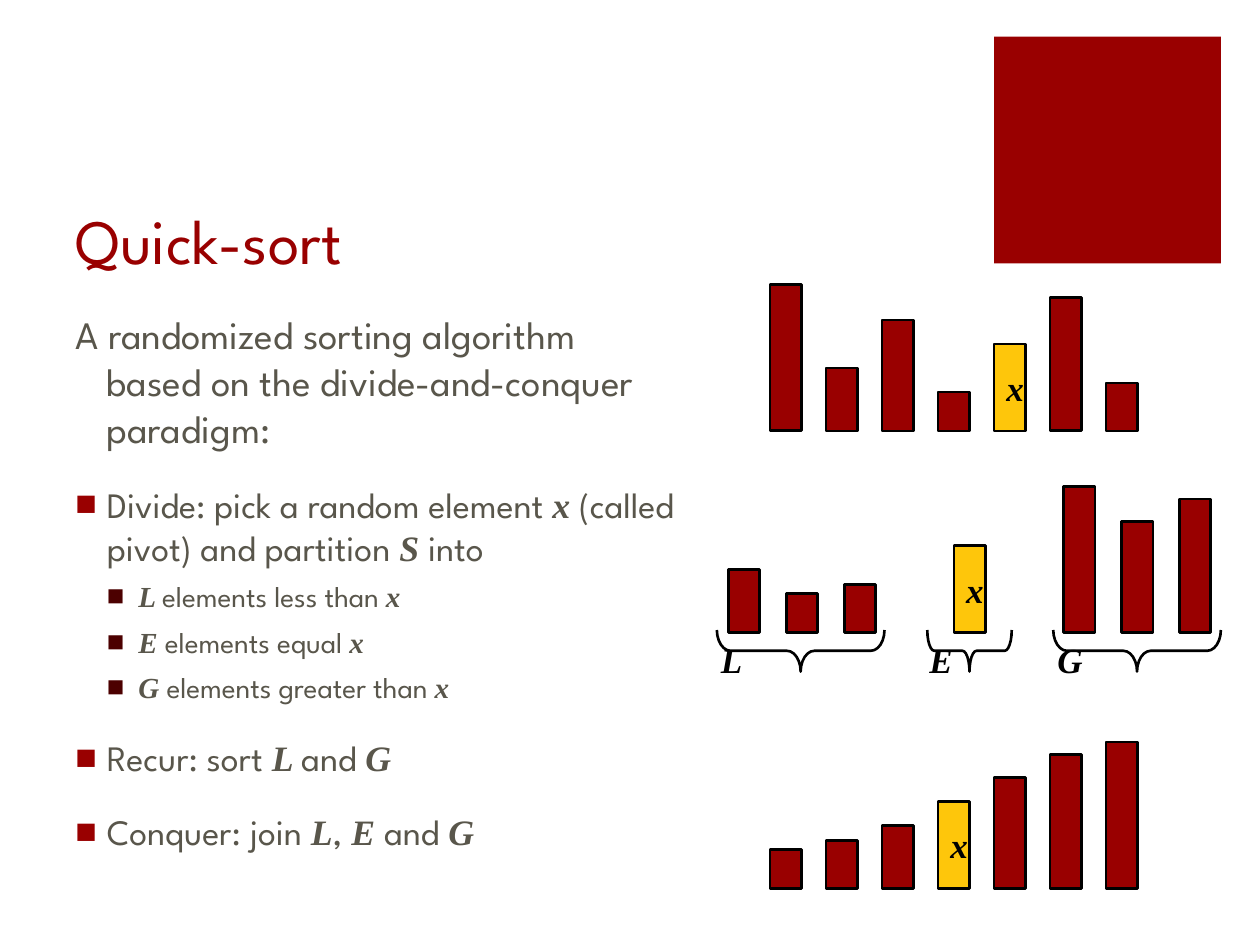
from lxml import etree
from pptx import Presentation
from pptx.dml.color import RGBColor
from pptx.enum.shapes import MSO_SHAPE as SHAPE
from pptx.enum.text import MSO_ANCHOR as ANCHOR, MSO_AUTO_SIZE as AUTO, PP_ALIGN as ALIGN
from pptx.oxml.ns import qn
from pptx.util import Inches, Pt

RED = RGBColor(0x99, 0x00, 0x00)
DARK_RED = RGBColor(0x4C, 0x00, 0x00)
GOLD = RGBColor(0xFE, 0xC6, 0x0B)
GREY = RGBColor(0x59, 0x56, 0x4B)
BLACK = RGBColor(0x00, 0x00, 0x00)
SANS, SERIF = "League Spartan", "Times New Roman"

BAR_W = 0.25
PIVOT = 0.69
# Text with *variables* marked, size, level, space before, bullet colour
BODY = [
    ("A randomized sorting algorithm based on the divide-and-conquer paradigm:",
     22.2, 0, 18, None),
    ("Divide: pick a random element *x* (called pivot) and partition *S* into",
     20.4, 0, 18, RED),
    ("*L *elements less than *x*", 16.6, 1, 6, DARK_RED),
    ("*E *elements equal *x*", 16.6, 1, 6, DARK_RED),
    ("*G *elements greater than *x*", 16.6, 1, 6, DARK_RED),
    ("Recur: sort *L *and *G*", 20.4, 0, 18, RED),
    ("Conquer: join *L*, *E *and *G*", 20.4, 0, 18, RED),
]
UNSORTED = [1.16, 0.5, 0.88, 0.31, PIVOT, 1.06, 0.38]


def add_run(p, text, size, color, variable=False):
    r = p.add_run()
    r.text = text
    r.font.size = Pt(size)
    r.font.color.rgb = color
    r.font.name = SERIF if variable else SANS
    if variable:
        r.font.bold = r.font.italic = True


def add_outlined(slide, kind, box, fill=None, line=BLACK):
    s = slide.shapes.add_shape(kind, *map(Inches, box))
    s.shadow.inherit = False
    if fill is None:
        s.fill.background()
    else:
        s.fill.solid()
        s.fill.fore_color.rgb = fill
    if line is None:
        s.line.fill.background()
    else:
        s.line.color.rgb = line
        s.line.width = Pt(1.5)
    return s


def add_label(s, text):
    tf = s.text_frame
    tf.word_wrap = False
    p = tf.paragraphs[0]
    p.alignment = ALIGN.LEFT
    add_run(p, text, 20, BLACK, variable=True)
    return tf


def set_bullet(p, level, color):
    pPr = p._p.get_or_add_pPr()
    pPr.set("marL", str(Inches(0.25 * (level + 1))))
    pPr.set("indent", str(Inches(-0.25)))
    if color is None:
        etree.SubElement(pPr, qn("a:buNone"))
        return
    clr = etree.SubElement(pPr, qn("a:buClr"))
    etree.SubElement(clr, qn("a:srgbClr"), val=str(color))
    etree.SubElement(pPr, qn("a:buFont"), typeface=SERIF)
    etree.SubElement(pPr, qn("a:buChar"), char="■")


def add_title(slide, text, box):
    title = slide.shapes.title
    title.left, title.top, title.width, title.height = map(Inches, box)
    tf = title.text_frame
    tf.auto_size = AUTO.NONE
    tf.vertical_anchor = ANCHOR.BOTTOM
    p = tf.paragraphs[0]
    p.alignment = ALIGN.LEFT
    add_run(p, text, 36, RED)


def add_body(slide, box):
    tf = slide.shapes.add_textbox(*map(Inches, box)).text_frame
    tf.word_wrap = True
    for i, (text, size, level, before, bullet) in enumerate(BODY):
        p = tf.add_paragraph() if i else tf.paragraphs[0]
        p.level = level
        p.space_before = Pt(before)
        set_bullet(p, level, bullet)
        for j, part in enumerate(text.split("*")):
            if part:
                add_run(p, part, size, GREY, variable=j % 2 == 1)


def add_bars(slide, left, bottom, heights, pitch=4 / 9):
    """Stand bars on a common base line; the pivot is gold and marked x."""
    for i, h in enumerate(heights):
        box = (left + i * pitch, bottom - h, BAR_W, h)
        s = add_outlined(slide, SHAPE.RECTANGLE, box, GOLD if h == PIVOT else RED)
        if h == PIVOT:
            add_label(s, "x").vertical_anchor = ANCHOR.MIDDLE


def add_brace(slide, label, left, top, width, height, curve):
    """Draw a brace below a part, pointing down, in the box as seen."""
    box = (left + (width - height) / 2, top + (height - width) / 2, height, width)
    s = add_outlined(slide, SHAPE.LEFT_BRACE, box)
    s.rotation = 270
    s.adjustments[0], s.adjustments[1] = curve, 0.5
    tf = add_label(s, label)
    tf.vertical_anchor = ANCHOR.TOP
    tf.margin_left, tf.margin_right = Inches(0.1), Inches(0.6)
    tf.margin_top = tf.margin_bottom = 0
    tf._txBody.bodyPr.set("vert", "eaVert")


def add_partition(slide, bottom):
    add_bars(slide, 8.44, bottom, [h for h in UNSORTED if h > PIVOT], 0.46)
    add_bars(slide, 5.78, bottom, [h for h in UNSORTED if h < PIVOT], 0.46)
    add_bars(slide, 7.57, bottom, [PIVOT])
    top = bottom - 0.02
    add_brace(slide, "L", 5.69, top, 1.33, 0.33, 0.33)
    add_brace(slide, "G", 8.36, top, 1.33, 0.33, 0.33)
    add_brace(slide, "E", 7.36, top, 0.67, 0.33, 0.17)


def main():
    prs = Presentation()
    prs.slide_width, prs.slide_height = Inches(10), Inches(7.5)
    slide = prs.slides.add_slide(prs.slide_layouts[5])
    add_outlined(slide, SHAPE.RECTANGLE, (7.89, 0.29, 1.8, 1.8), RED, line=None)
    add_title(slide, "Quick-sort", (0.5, 1, 7.12, 1.25))
    add_body(slide, (0.5, 2.42, 4.96, 4.28))
    add_bars(slide, 6.11, 3.42, UNSORTED)
    add_partition(slide, 5.02)
    add_bars(slide, 6.11, 7.05, sorted(UNSORTED))
    prs.save("out.pptx")


if __name__ == "__main__":
    main()
